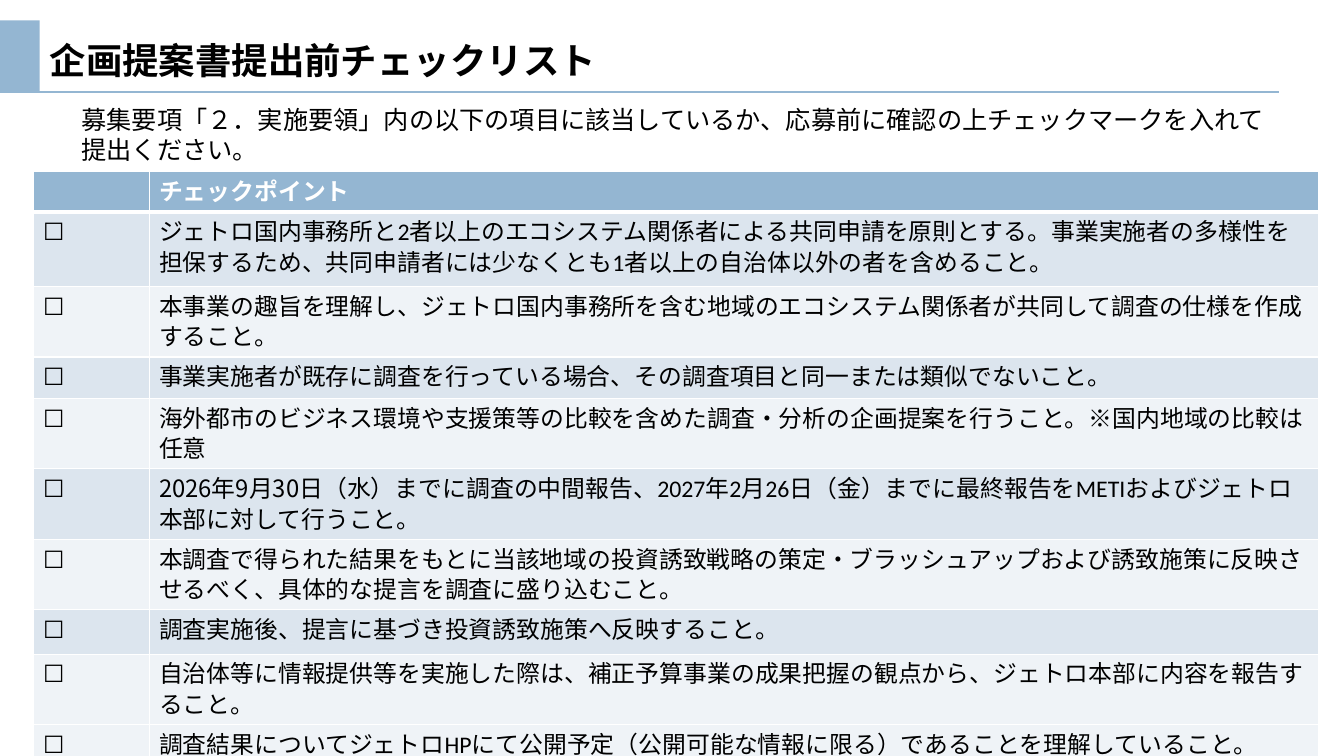
"""Build the checklist slide to review before submitting a project proposal."""
from dataclasses import dataclass

from lxml import etree
from pptx import Presentation
from pptx import util as u
from pptx.dml.color import RGBColor
from pptx.enum import shapes, text
from pptx.oxml.ns import qn


@dataclass(frozen=True)
class Theme:
    accent: str = "94B6D2"
    band_dark: str = "DCE5EE"
    band_light: str = "EFF3F7"
    ink: str = "000000"
    white: str = "FFFFFF"
    latin: str = "Calibri"
    cjk: str = "Noto Sans CJK JP"
    title: float = 26
    lead: float = 18
    body: float = 17
    leading: float = 21.8
    rule: float = 2
    border: float = 0.97
    header_border: float = 2.9


theme = Theme()


def set_typeface(font, name):
    font.name = name
    etree.SubElement(font._rPr, qn("a:ea"), typeface=name)


def style(paragraph, size, color, bold=False):
    paragraph.alignment = text.PP_ALIGN.LEFT
    paragraph.font.size = u.Pt(size)
    paragraph.font.bold = bold
    paragraph.font.color.rgb = RGBColor.from_string(color)
    set_typeface(paragraph.font, theme.latin)


checkpoints = [
    (53.3, "ジェトロ国内事務所と2者以上のエコシステム関係者による共同申請を原則とする。事業実施者の多様性を担保するため、共同申請者には少なくとも1者以上の自治体以外の者を含めること。"),
    (49, "本事業の趣旨を理解し、ジェトロ国内事務所を含む地域のエコシステム関係者が共同して調査の仕様を作成すること。"),
    (29.5, "事業実施者が既存に調査を行っている場合、その調査項目と同一または類似でないこと。"),
    (32.4, "海外都市のビジネス環境や支援策等の比較を含めた調査・分析の企画提案を行うこと。※国内地域の比較は任意"),
    (49, "2026年9|月|30日（水）まで|に調査の中間報告、2027年2月26日（金）までに最終報告をMETIおよびジェトロ本部に対して行うこと。"),
    (49, "本調査で得られた結果をもとに当該地域の投資誘致戦略の策定・ブラッシュアップおよび誘致施策に反映させるべく、具体的な提言を調査に盛り込むこと。"),
    (31.7, "調査実施後、提言に基づき投資誘致施策へ反映すること。"),
    (32.4, "自治体等に情報提供等を実施した際は、補正予算事業の成果把握の観点から、ジェトロ本部に内容を報告すること。"),
    (49, "調査結果についてジェトロHPにて公開予定（公開可能な情報に限る）であることを理解していること。"),
]

deck = Presentation()
deck.slide_width, deck.slide_height = u.Pt(960), u.Pt(540)
slide = deck.slides.add_slide(deck.slide_layouts[5])

title_rule = slide.shapes.add_connector(
    shapes.MSO_CONNECTOR.STRAIGHT, u.Pt(0), u.Pt(65.7), u.Pt(913.7), u.Pt(65.7))
title_rule.line.color.rgb = RGBColor.from_string(theme.accent)
title_rule.line.width = u.Pt(theme.rule)
etree.SubElement(title_rule._element.spPr, qn("a:effectLst"))

title_tab = slide.shapes.add_shape(
    shapes.MSO_SHAPE.RECTANGLE, u.Pt(0), u.Pt(14.5), u.Pt(28.3), u.Pt(51.2))
title_tab.shadow.inherit = False
title_tab.fill.solid()
title_tab.fill.fore_color.rgb = RGBColor.from_string(theme.accent)
title_tab.line.fill.background()

title = slide.shapes.title
title.left, title.top, title.width, title.height = u.Pt(28.3), u.Pt(17.3), u.Pt(659), u.Pt(51.2)
title.text_frame.text = "企画提案書提出前チェックリスト"
title.text_frame.vertical_anchor = text.MSO_ANCHOR.MIDDLE
style(title.text_frame.paragraphs[0], theme.title, theme.ink, bold=True)

lead = slide.shapes.add_textbox(u.Pt(51.1), u.Pt(70.6), u.Pt(862.6), u.Pt(51.1)).text_frame
lead.word_wrap = True
lead.auto_size = text.MSO_AUTO_SIZE.SHAPE_TO_FIT_TEXT
lead.text = "募集要項「２．実施要領」内の以下の項目に該当しているか、応募前に確認の上チェックマークを入れて提出ください。"
style(lead.paragraphs[0], theme.lead, theme.ink)

rows = [(27.4, "", "チェックポイント")] + [(height, "☐", point) for height, point in checkpoints]
checklist = slide.shapes.add_table(
    len(rows), 2, u.Pt(24), u.Pt(122.7), u.Pt(918), u.Pt(404)).table
checklist.columns[0].width, checklist.columns[1].width = u.Pt(82.8), u.Pt(835.2)

for row_no, (height, *entries) in enumerate(rows):
    checklist.rows[row_no].height = u.Pt(height)
    is_header = row_no == 0
    is_dark = row_no % 2 == 1 and row_no < len(checkpoints)
    band = theme.accent if is_header else theme.band_dark if is_dark else theme.band_light
    for column_no, entry in enumerate(entries):
        cell = checklist.cell(row_no, column_no)
        cell.margin_left = cell.margin_right = u.Pt(6.8)
        cell.margin_top = cell.margin_bottom = u.Pt(3.4)
        for side in ("L", "R", "T", "B"):
            is_thick = (row_no, side) in ((0, "B"), (1, "T"))
            width = theme.header_border if is_thick else theme.border
            border = etree.SubElement(
                cell._tc.get_or_add_tcPr(), qn(f"a:ln{side}"), w=str(u.Pt(width)))
            fill = etree.SubElement(border, qn("a:solidFill"))
            etree.SubElement(fill, qn("a:srgbClr"), val=theme.white)
        cell.fill.solid()
        cell.fill.fore_color.rgb = RGBColor.from_string(band)

        paragraph = cell.text_frame.paragraphs[0]
        paragraph.line_spacing = u.Pt(theme.leading)
        style(paragraph, theme.body, theme.white if is_header else theme.ink, bold=is_header)
        pieces = entry.split("|")
        for piece_no, piece in enumerate(pieces):
            run = paragraph.add_run()
            run.text = piece
            if piece_no in (0, 2) and len(pieces) > 1:
                set_typeface(run.font, theme.cjk)

deck.save("out.pptx")
